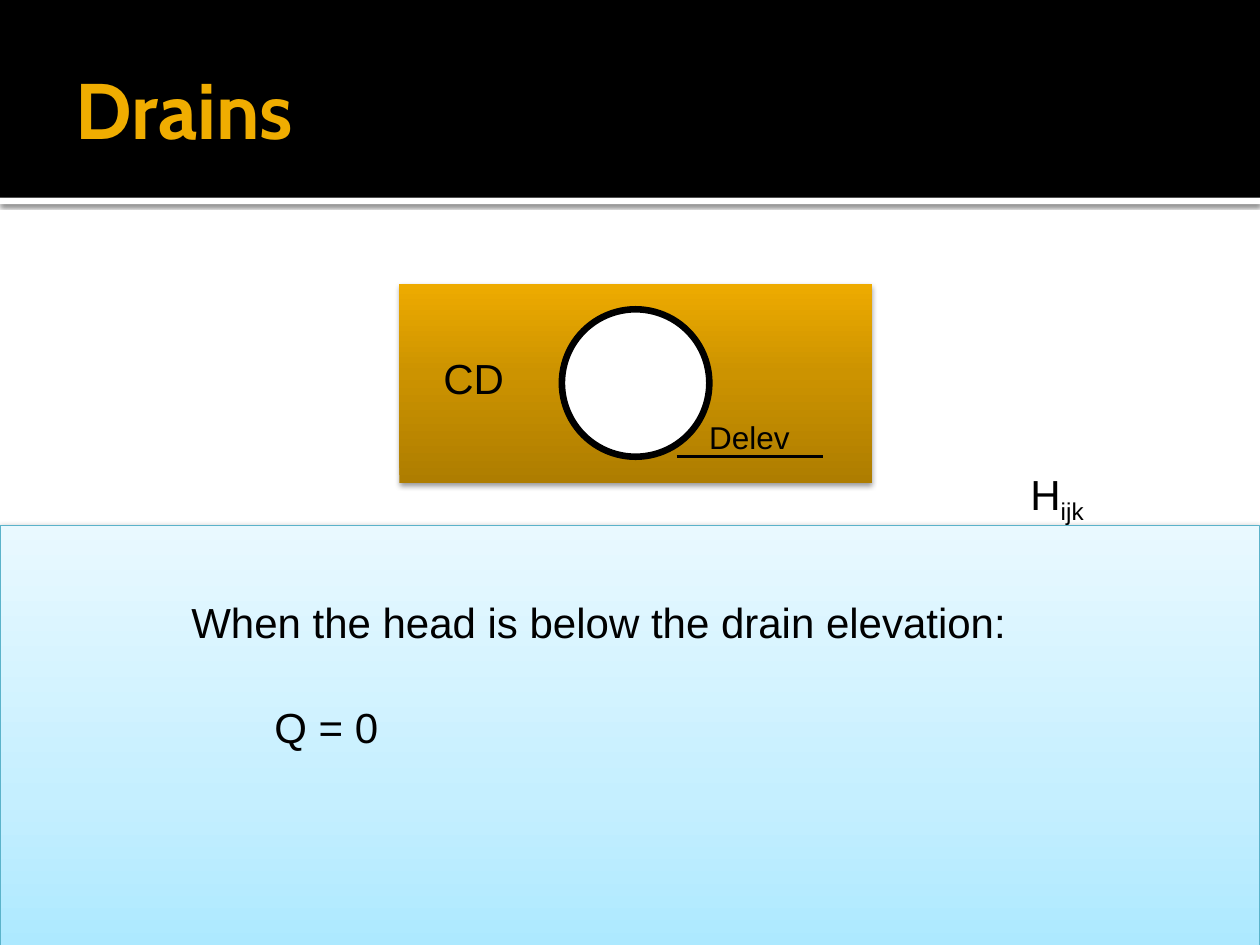
from lxml.etree import SubElement
from pptx import Presentation
from pptx.dml.color import RGBColor
from pptx.enum.shapes import MSO_CONNECTOR as CONN, MSO_SHAPE as SHAPE
from pptx.enum.text import MSO_ANCHOR as ANCHOR, MSO_AUTO_SIZE as AUTO, PP_ALIGN as ALIGN
from pptx.oxml.ns import qn
from pptx.util import Inches, Pt

W, H = 10, 7.5
COLORS = {"black": "000000", "white": "FFFFFF", "title": "F0AD00", "water_line": "5BB3CA"}
WATER = [(0, "ADE9FF"), (35, "C5EFFF"), (100, "E9F9FF")]
CONDUCTANCE = [(0, "AE7D00"), (55, "CC9300"), (100, "EEAB00")]


def rgb(name):
    return RGBColor.from_string(COLORS[name])


def inches(*values):
    return [Inches(v) for v in values]


def set_gradient(sp, stops):
    """Fill from bottom to top with (percent, colour) stops."""
    sp.fill.gradient()
    sp.fill.gradient_angle = 90
    gs_list = sp._element.spPr.find(qn("a:gradFill")).find(qn("a:gsLst"))
    for gs in list(gs_list):
        gs_list.remove(gs)
    for pos, color in stops:
        gs = SubElement(gs_list, qn("a:gs"), pos=str(pos * 1000))
        SubElement(gs, qn("a:srgbClr"), val=color)


def set_shadow(sp, alpha, blur, dist):
    """Cast a black shadow straight down."""
    effects = sp._element.spPr.find(qn("a:effectLst"))
    shadow = SubElement(effects, qn("a:outerShdw"), blurRad=str(Pt(blur)),
                        dist=str(Pt(dist)), dir="5400000", rotWithShape="0")
    color = SubElement(shadow, qn("a:srgbClr"), val=COLORS["black"])
    SubElement(color, qn("a:alpha"), val=str(alpha * 1000))


def add_shape(shapes, kind, box, fill, line=None, width=0, shadow=None):
    sp = shapes.add_shape(kind, *inches(*box))
    sp.shadow.inherit = False
    if isinstance(fill, list):
        set_gradient(sp, fill)
    else:
        sp.fill.solid()
        sp.fill.fore_color.rgb = rgb(fill)
    if line:
        sp.line.color.rgb = rgb(line)
        sp.line.width = Pt(width)
    else:
        sp.line.fill.background()
    if shadow:
        set_shadow(sp, *shadow)
    return sp


def add_text(shapes, box, text, size=24, sub=None, wrap=False):
    tf = shapes.add_textbox(*inches(*box)).text_frame
    tf.word_wrap = wrap
    tf.auto_size = AUTO.SHAPE_TO_FIT_TEXT
    p = tf.paragraphs[0]
    for part in filter(None, (text, sub)):
        r = p.add_run()
        r.text = part
        r.font.size, r.font.name = Pt(size), "Arial"
        r.font.color.rgb = rgb("black")
        if part == sub:
            r.font._element.set("baseline", "-25000")


def add_header(s, x, y, w, h):
    # Black band over a thin white rule
    add_shape(s.shapes, SHAPE.RECTANGLE, (x, y + h, w, 0.05), "white", shadow=(60, 2.5, 0.8))
    add_shape(s.shapes, SHAPE.RECTANGLE, (x, y, w, h), "black")

    # Title placeholder, raised above the band
    title = s.shapes.title
    title.left, title.top, title.width, title.height = inches(
        x + 0.05 * w, y + 0.17, 0.9 * w, 1.37)
    s.shapes._spTree.append(title._element)
    tf = title.text_frame
    tf.vertical_anchor = ANCHOR.MIDDLE
    tf.margin_left, tf.margin_right = inches(0.1, 0.05)
    p = tf.paragraphs[0]
    p.alignment = ALIGN.LEFT
    r = p.add_run()
    r.text = "Drains"
    r.font.size, r.font.name, r.font.bold = Pt(45), "Cabin", True
    r.font.color.rgb = rgb("title")


def add_drain(s, x, y, w, h):
    # Conductance block with the drain pipe in its centre
    add_shape(s.shapes, SHAPE.RECTANGLE, (x, y, w, h), CONDUCTANCE, shadow=(38, 3.1, 2))
    d = 1.17
    pipe_y = y + (h - d) / 2
    add_shape(s.shapes, SHAPE.OVAL, (x + (w - d) / 2, pipe_y, d, d), "white", "black", 3.78)
    add_text(s.shapes, (x + 0.25, y + 0.5, 0.69, 0.5), "CD")

    # Drain elevation mark, level with the bottom of the pipe
    mark = s.shapes.add_group_shape().shapes
    level = pipe_y + d
    line = mark.add_connector(CONN.STRAIGHT, *inches(x + 2.2, level, x + 3.36, level))
    line.line.color.rgb = rgb("black")
    line.line.width = Pt(1.5)
    SubElement(line._element.spPr, qn("a:effectLst"))
    add_text(mark, (x + 2.36, level - 0.36, 0.85, 0.4), "Delev", 18)


def add_water(s, x, y, w, h):
    # Water body, its head label and the flow rule
    add_shape(s.shapes, SHAPE.RECTANGLE, (x, y, w, h), WATER, "water_line", 0.5, (38, 3.5, 2))
    add_text(s.shapes, (x + 8.08, y - 0.5, 0.66, 0.5), "H", sub="ijk")
    add_text(s.shapes, (x + 1.42, y + 0.52, 7.33, 0.5),
             "When the head is below the drain elevation:", wrap=True)
    add_text(s.shapes, (x + 2.08, y + 1.35, 6.83, 0.5), "Q = 0", wrap=True)


def main():
    prs = Presentation()
    prs.slide_width, prs.slide_height = inches(W, H)
    s = prs.slides.add_slide(prs.slide_layouts[5])
    s.background.fill.solid()
    s.background.fill.fore_color.rgb = rgb("white")
    add_header(s, 0, 0, W, 1.57)
    add_water(s, 0, H * 5 / 9, W, H * 4 / 9)
    add_drain(s, 3.17, 0.3 * H, 3.75, 1.58)
    prs.save("out.pptx")


if __name__ == "__main__":
    main()
